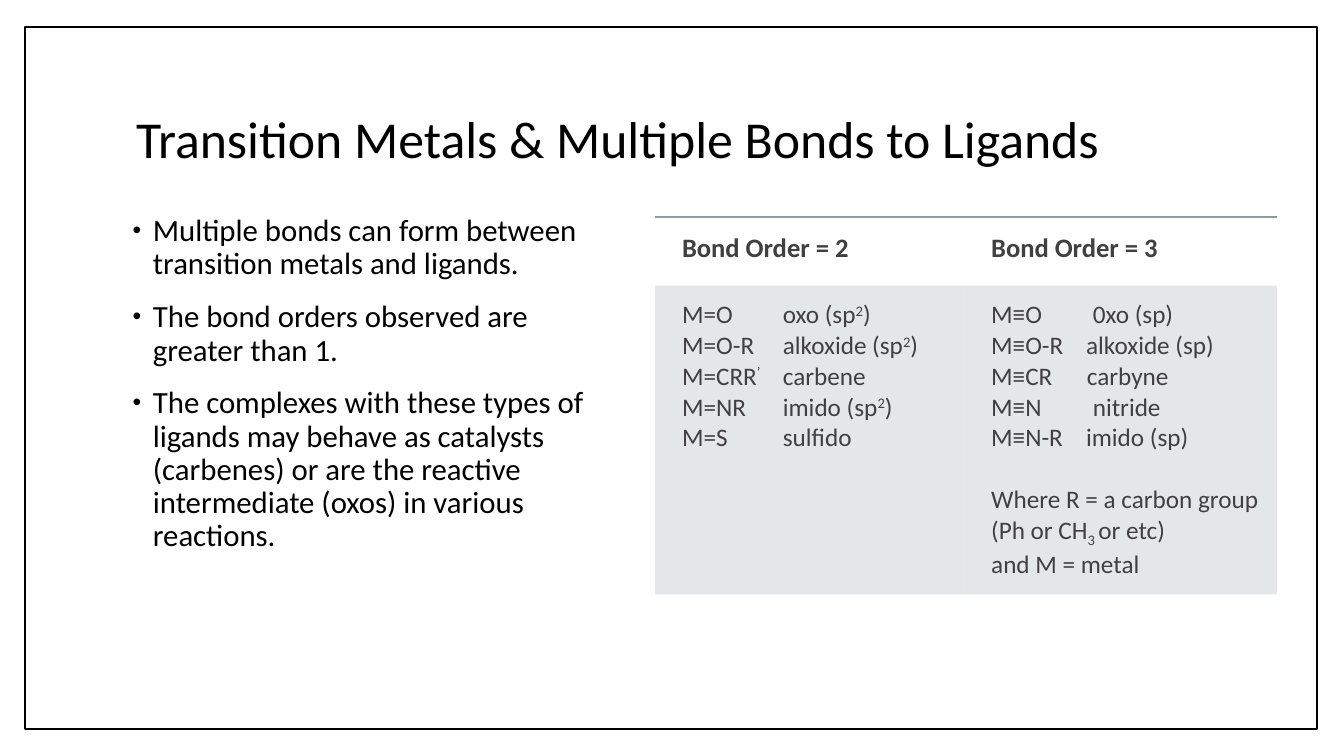
import pptx
import pptx.util
import pptx.dml.color
import pptx.enum.shapes
import pptx.enum.text
import pptx.oxml
import pptx.oxml.ns

NAMESPACE = pptx.oxml.ns.nsdecls("a")
SHIFTS = {"^": "30000", "_": "-25000"}

deck = pptx.Presentation()
deck.slide_width = pptx.util.Inches(13.33)
deck.slide_height = pptx.util.Inches(7.5)
COLUMN = deck.slide_width / 160
ROW = deck.slide_height / 90


def color(code):
    return pptx.dml.color.RGBColor.from_string(code)


def write(para, text, size=18, ink="404040", bold=False, before=0, spacing=1.0):
    para.alignment = pptx.enum.text.PP_ALIGN.LEFT
    para.line_spacing = spacing
    para.space_before = pptx.util.Pt(before)
    for piece in text.split("|"):
        span = para.add_run()
        span.text = piece.lstrip("^_")
        span.font.name = "Calibri"
        span.font.size = pptx.util.Pt(size)
        span.font.bold = bold
        span.font.color.rgb = color(ink)
        if piece[0] in SHIFTS:
            span.font.fill
            span._r.get_or_add_rPr().set("baseline", SHIFTS[piece[0]])


page = deck.slides.add_slide(deck.slide_layouts[1])
title, body = page.placeholders

frame = page.shapes.add_shape(
    pptx.enum.shapes.MSO_SHAPE.RECTANGLE,
    int(3 * COLUMN), int(3.2 * ROW), int(153.8 * COLUMN), int(83.6 * ROW))
frame.shadow.inherit = False
frame.fill.solid()
frame.fill.fore_color.rgb = color("FFFFFF")
frame.line.color.rgb = color("000000")
frame.line.width = pptx.util.Pt(1)
title.element.addprevious(frame.element)

for box, left, top, width, height in [(title, 15, 8, 135.5, 17.8), (body, 14, 25, 61, 53)]:
    box.left, box.width = int(left * COLUMN), int(width * COLUMN)
    box.top, box.height = int(top * ROW), int(height * ROW)
    box.text_frame.word_wrap = True
    box.text_frame.auto_size = pptx.enum.text.MSO_AUTO_SIZE.NONE

title.text_frame.vertical_anchor = pptx.enum.text.MSO_ANCHOR.MIDDLE
write(title.text_frame.paragraphs[0], "Transition Metals & Multiple Bonds to Ligands",
      size=37, ink="000000", spacing=0.9)

points = [
    "Multiple bonds can form between transition metals and ligands.",
    "The bond orders observed are greater than 1.",
    "The complexes with these types of ligands may behave as catalysts (carbenes) "
    "or are the reactive intermediate (oxos) in various reactions.",
]
for index, point in enumerate(points):
    para = body.text_frame.add_paragraph() if index else body.text_frame.paragraphs[0]
    write(para, point, size=22, ink="000000", before=14, spacing=0.9)
    layout = para._p.get_or_add_pPr()
    layout.set("marL", str(int(3 * COLUMN)))
    layout.set("indent", str(int(-2.4 * COLUMN)))
    for bullet in ['<a:buClr {}><a:srgbClr val="000000"/></a:buClr>',
                   '<a:buSzPct {} val="80000"/>',
                   '<a:buFont {} typeface="Arial"/>',
                   '<a:buChar {} char="•"/>']:
        layout.append(pptx.oxml.parse_xml(bullet.format(NAMESPACE)))

headings = ["Bond Order = 2", "Bond Order = 3"]
double_bonds = [
    ("M=O\toxo (sp|^2|)", 12),
    ("M=O-R\talkoxide (sp|^2|)", 12),
    ("M=CRR|^’|\tcarbene", 12),
    ("M=NR\timido (sp|^2|)", 12),
    ("M=S\tsulfido", 12),
]
triple_bonds = [
    ("M≡O\t0xo (sp)", 12.1),
    ("M≡O-R\talkoxide (sp)", 11.3),
    ("M≡CR\tcarbyne", 11.4),
    ("M≡N\tnitride", 12.1),
    ("M≡N-R\timido (sp)", 11.3),
    ("Where R = a carbon group", None),
    ("(Ph or CH|_3 |or etc)", None),
    ("and M = metal", None),
]

holder = page.shapes.add_table(
    2, 2, int(78 * COLUMN), int(25.8 * ROW), int(74 * COLUMN), int(44.9 * ROW))
table = holder.table
table.first_row = False
table.horz_banding = False
for style in holder.element.iter(pptx.oxml.ns.qn("a:tableStyleId")):
    style.text = "{2D5ABB26-0587-4C30-8999-92F81FD0307C}"
table.columns[0].width, table.columns[1].width = int(36.8 * COLUMN), int(37.2 * COLUMN)
table.rows[0].height, table.rows[1].height = int(8.2 * ROW), int(36.7 * ROW)

for column, bonds in enumerate([double_bonds, triple_bonds]):
    header, listing = table.cell(0, column), table.cell(1, column)
    for cell, inset in [(header, 1.9), (listing, 1.7)]:
        cell.margin_left = int(3.2 * COLUMN)
        cell.margin_right = int(inset * COLUMN)
        cell.margin_top = cell.margin_bottom = int(inset * ROW)

    header.fill.background()
    write(header.text_frame.paragraphs[0], headings[column], size=19, bold=True)
    header._tc.get_or_add_tcPr().insert(0, pptx.oxml.parse_xml(
        f'<a:lnT {NAMESPACE} w="19050"><a:solidFill><a:srgbClr val="8F9A9D"/>'
        '</a:solidFill><a:prstDash val="solid"/></a:lnT>'))

    listing.fill.solid()
    listing.fill.fore_color.rgb = color("B4BCBE")
    for shade in listing._tc.tcPr.iter(pptx.oxml.ns.qn("a:srgbClr")):
        shade.append(pptx.oxml.parse_xml(f'<a:alpha {NAMESPACE} val="35000"/>'))
    for index, (bond, stop) in enumerate(bonds):
        para = listing.text_frame.add_paragraph() if index else listing.text_frame.paragraphs[0]
        write(para, bond, before=22 if bond.startswith("Where") else 0)
        if stop:
            para._p.get_or_add_pPr().append(pptx.oxml.parse_xml(
                f'<a:tabLst {NAMESPACE}><a:tab pos="{int(stop * COLUMN)}" algn="l"/></a:tabLst>'))

deck.save("out.pptx")
